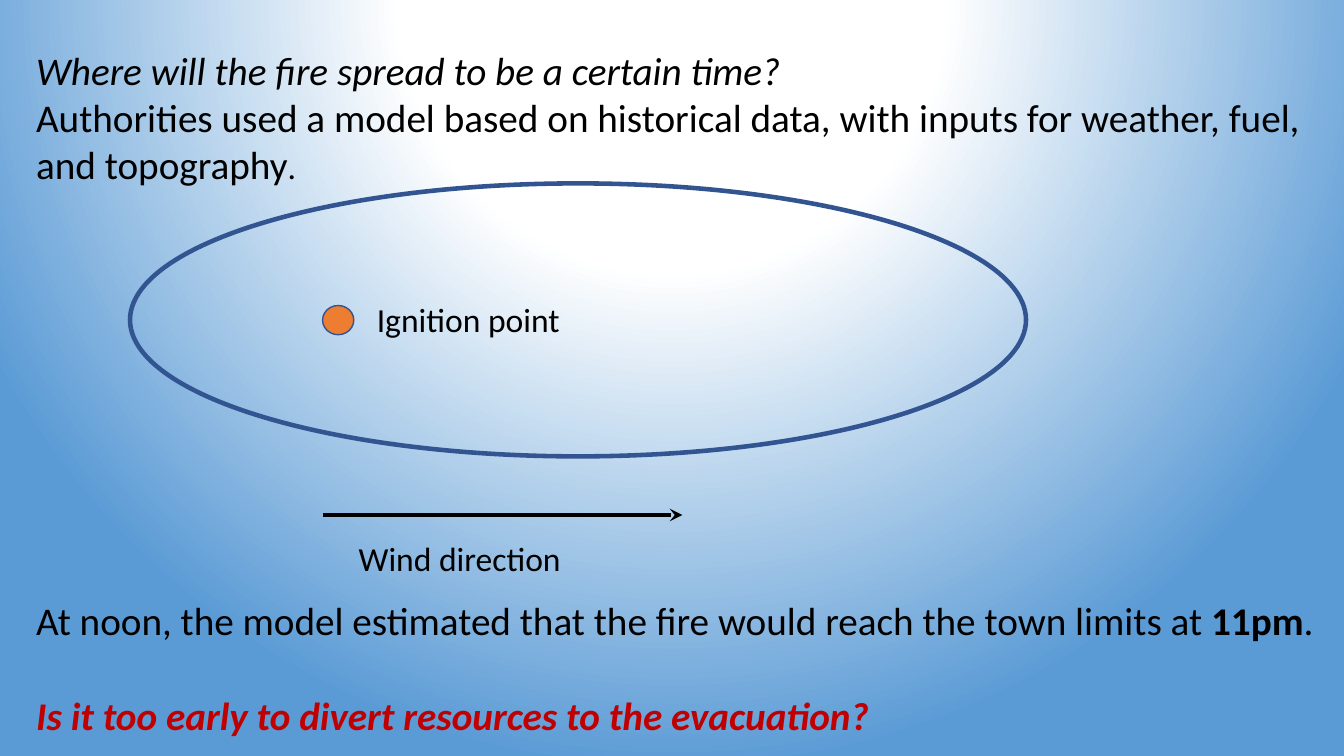
from lxml import etree
from pptx import Presentation
from pptx.dml.color import RGBColor
from pptx.enum.shapes import MSO_CONNECTOR, MSO_SHAPE
from pptx.enum.text import MSO_AUTO_SIZE
from pptx.oxml.ns import qn
from pptx.util import Pt

OVAL = MSO_SHAPE.OVAL
LINE = MSO_CONNECTOR.STRAIGHT
GROW = MSO_AUTO_SIZE.SHAPE_TO_FIT_TEXT
BLACK, WHITE, RED = "000000", "FFFFFF", "C00000"
BLUE, NAVY, FLAME = "5B9BD5", "325491", "ED7D31"
FONT = "Calibri"


def paint(color, value):
    color.rgb = RGBColor.from_string(value)


def add_run(para, text, size=28, color=BLACK, bold=False, italic=False):
    run = para.add_run()
    run.text = text
    font = run.font
    font.name, font.size = FONT, Pt(size)
    font.bold, font.italic = bold, italic
    paint(font.color, color)


def add_box(slide, left, top, width, height, wrap=False):
    box = slide.shapes.add_textbox(Pt(left), Pt(top), Pt(width), Pt(height))
    frame = box.text_frame
    frame.word_wrap = wrap
    frame.auto_size = GROW
    return frame


def add_label(slide, text, left, top, width):
    frame = add_box(slide, left, top, width, 36)
    add_run(frame.paragraphs[0], text, size=24)


def add_oval(slide, left, top, width, height, weight, fill=None):
    oval = slide.shapes.add_shape(OVAL, Pt(left), Pt(top), Pt(width), Pt(height))
    oval.shadow.inherit = False
    if fill:
        oval.fill.solid()
        paint(oval.fill.fore_color, fill)
    else:
        oval.fill.background()
    oval.line.width = Pt(weight)
    paint(oval.line.color, NAVY)


def add_arrow(slide, start, end, level):
    arrow = slide.shapes.add_connector(LINE, Pt(start), Pt(level), Pt(end), Pt(level))
    arrow.line.width = Pt(3)
    paint(arrow.line.color, BLACK)
    etree.SubElement(arrow.line._get_or_add_ln(), qn("a:tailEnd"), type="stealth")
    etree.SubElement(arrow._element.spPr, qn("a:effectLst"))


def set_glow(slide):
    slide.background.fill.gradient()
    grad = slide.element.find(".//" + qn("a:gradFill"))
    for child in list(grad):
        grad.remove(child)
    stops = etree.SubElement(grad, qn("a:gsLst"))
    for pos, color in ((0, WHITE), (35, WHITE), (100, BLUE)):
        stop = etree.SubElement(stops, qn("a:gs"), pos=str(pos * 1000))
        etree.SubElement(stop, qn("a:srgbClr"), val=color)
    shade = etree.SubElement(grad, qn("a:path"), path="circle")
    etree.SubElement(shade, qn("a:fillToRect"),
                     l="50000", t="-80000", r="50000", b="180000")


def main():
    deck = Presentation()
    deck.slide_width, deck.slide_height = Pt(960), Pt(540)
    slide = deck.slides.add_slide(deck.slide_layouts[6])
    set_glow(slide)

    intro = add_box(slide, 18.7, 29.5, 938, 110, wrap=True)
    add_run(intro.paragraphs[0], "Where will the fire spread to be a certain time?",
            italic=True)
    para = intro.add_paragraph()
    add_run(para, "Authorities used a model based on historical data, "
                  "with inputs for weather, fuel, and topography")
    add_run(para, ".", size=24)

    add_oval(slide, 92.9, 131, 640, 195, 3.25)
    add_oval(slide, 230.4, 218.2, 22.3, 20.9, 1, fill=FLAME)
    add_label(slide, "Ignition point", 262.1, 210.2, 146.2)
    add_arrow(slide, 230.4, 487.4, 367.9)
    add_label(slide, "Wind direction", 249.1, 380.9, 160.6)

    close = add_box(slide, 18.7, 422.6, 938, 110)
    para = close.paragraphs[0]
    add_run(para, "At noon, the model estimated that the fire would reach "
                  "the town limits at ")
    add_run(para, "11pm", bold=True)
    add_run(para, ".")
    para = close.add_paragraph()
    para.space_before = Pt(34)
    add_run(para, "Is it too early to divert resources to the evacuation?",
            color=RED, bold=True, italic=True)

    deck.save("out.pptx")


if __name__ == "__main__":
    main()
